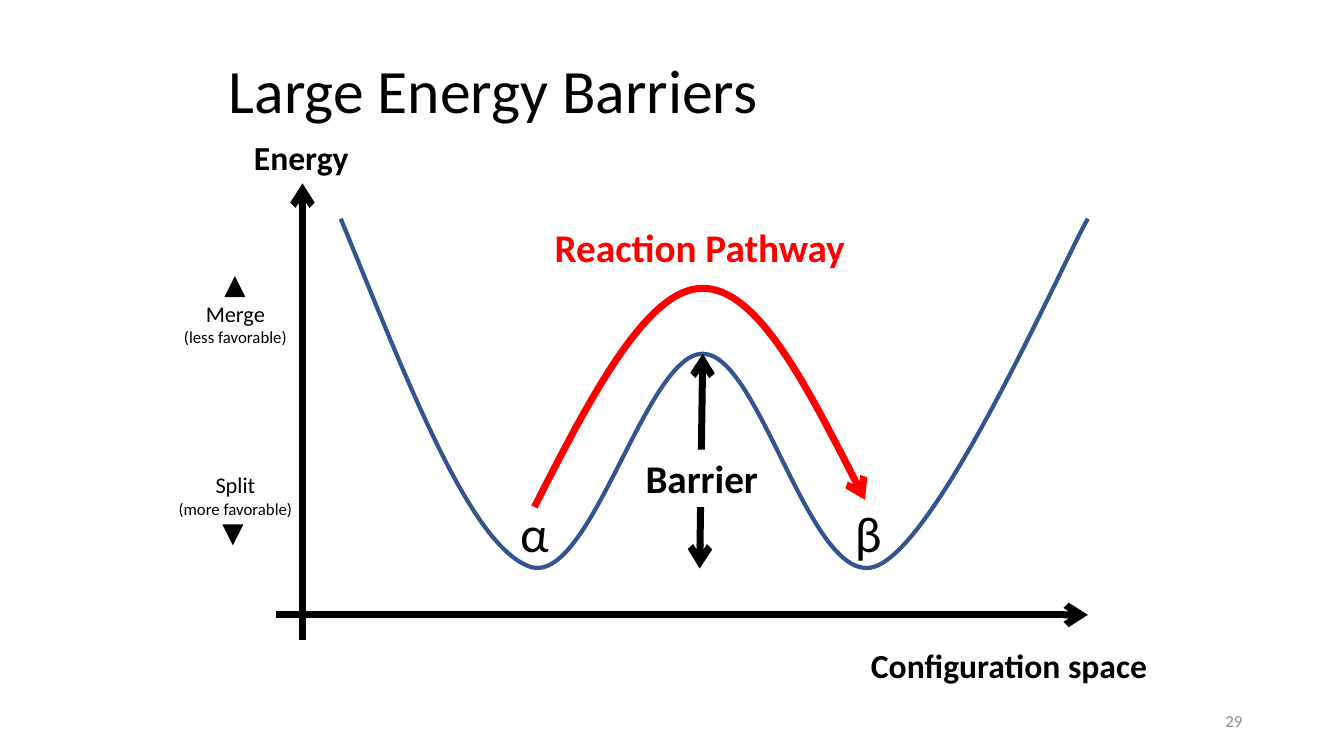
from lxml.etree import SubElement
from pptx import Presentation
from pptx.dml.color import RGBColor
from pptx.enum.shapes import MSO_CONNECTOR, MSO_SHAPE
from pptx.enum.text import MSO_ANCHOR, PP_ALIGN
from pptx.oxml.ns import qn
from pptx.util import Inches, Pt

BLACK, RED, BLUE, GREY, WHITE = "000000", "FF0000", "325491", "8C8C8C", "FFFFFF"


def colour(value):
    return RGBColor.from_string(value)


def style_line(shape, value, width, head=None, tail=None):
    """Colour a line and put arrowheads at its start (head) and end (tail)."""
    shape.line.color.rgb = colour(value)
    shape.line.width = Pt(width)
    for tag, kind in (("a:headEnd", head), ("a:tailEnd", tail)):
        if kind:
            SubElement(shape.line._get_or_add_ln(), qn(tag)).set("type", kind)


def write(shape, lines, value=BLACK, bold=False, align=PP_ALIGN.LEFT,
          anchor=MSO_ANCHOR.TOP, wrap=True):
    """Fill a shape with (text, size) lines, one paragraph each."""
    frame = shape.text_frame
    frame.word_wrap = wrap
    frame.vertical_anchor = anchor
    frame.text = "\n".join(text for text, size in lines)
    for para, (text, size) in zip(frame.paragraphs, lines):
        para.alignment = align
        for span in para.runs:
            span.font.name = "Calibri"
            span.font.size = Pt(size)
            span.font.bold = bold
            span.font.color.rgb = colour(value)


def add_text(page, place, lines, **options):
    box = page.shapes.add_textbox(*map(Inches, place))
    write(box, lines, **options)
    return box


def add_arrow(page, start, end, head=None, tail=None):
    points = map(Inches, (*start, *end))
    arrow = page.shapes.add_connector(MSO_CONNECTOR.STRAIGHT, *points)
    style_line(arrow, BLACK, 5, head, tail)
    SubElement(arrow._element.spPr, qn("a:effectLst"))


def add_curve(page, points, value, width, tail=None):
    """Draw Bézier pieces: a start, then two controls and an end for each."""
    start, *others = [(Inches(x), Inches(y)) for x, y in points]
    builder = page.shapes.build_freeform(*start)
    builder.add_line_segments(others, close=False)
    curve = builder.convert_to_shape()
    curve.fill.background()
    curve.shadow.inherit = False
    style_line(curve, value, width, tail=tail)
    # Turn every three straight segments into one cubic piece
    outline = next(curve._element.iter(qn("a:path")))
    segments = outline.findall(qn("a:lnTo"))
    for first in range(0, len(segments), 3):
        piece = SubElement(outline, qn("a:cubicBezTo"))
        for segment in segments[first:first + 3]:
            piece.append(segment[0])
            outline.remove(segment)


def add_tendency(page, top, name, note, x, tail_start, tail_end):
    """A label beside the energy axis with a small triangle."""
    add_arrow(page, (x, tail_start), (x, tail_end), tail="triangle")
    add_text(page, (1.67, top, 1.33, 0.57), [(name, 16), (note, 12)],
             align=PP_ALIGN.CENTER)


def main():
    deck = Presentation()
    deck.slide_width, deck.slide_height = Inches(13.33), Inches(7.5)
    page = deck.slides.add_slide(deck.slide_layouts[6])

    # Energy landscape with two wells
    add_curve(page, [(3.38, 2.17),
                     (4.02, 3.73), (4.65, 5.4), (5.25, 5.62),
                     (5.85, 5.84), (6.4, 3.51), (6.97, 3.51),
                     (7.54, 3.51), (8.04, 5.84), (8.68, 5.62),
                     (9.32, 5.4), (10.56, 2.56), (10.79, 2.17)], BLUE, 3)

    # Axes and their names
    add_arrow(page, (3, 1.82), (3, 6.35), head="arrow")
    add_arrow(page, (10.79, 6.1), (2.74, 6.1), head="arrow")
    add_text(page, (8.54, 6.35, 2.97, 0.5), [("Configuration space", 24)],
             bold=True, wrap=False)
    add_text(page, (2.42, 1.31, 1.15, 0.5), [("Energy", 24)],
             bold=True, wrap=False)

    # States at the bottom of the wells
    for left, state in ((5.06, "α"), (8.38, "β")):
        add_text(page, (left, 4.93, 0.48, 0.71), [(state, 36)])

    # Title
    title = add_text(page, (2.17, 0.3, 9, 1.25), [("Large Energy Barriers", 44)],
                     anchor=MSO_ANCHOR.MIDDLE)
    title.text_frame.paragraphs[0].line_spacing = 0.9

    # Reaction pathway
    add_curve(page, [(5.3, 5.03),
                     (5.85, 3.95), (6.41, 2.87), (6.96, 2.86),
                     (7.5, 2.85), (8.04, 3.9), (8.58, 4.96)],
              RED, 5, tail="arrow")
    add_text(page, (5.38, 2.17, 3.12, 0.57), [("Reaction Pathway", 28)],
             value=RED, bold=True, align=PP_ALIGN.CENTER, wrap=False)

    # Barrier height, its label covering the middle of the arrow
    add_arrow(page, (6.97, 3.51), (6.94, 5.64), head="arrow", tail="arrow")
    barrier = page.shapes.add_shape(
        MSO_SHAPE.RECTANGLE, *map(Inches, (6.27, 4.46, 1.38, 0.57)))
    barrier.shadow.inherit = False
    barrier.fill.solid()
    barrier.fill.fore_color.rgb = colour(WHITE)
    barrier.line.fill.background()
    write(barrier, [("Barrier", 28)], bold=True, align=PP_ALIGN.CENTER)

    # What happens up and down the energy axis
    add_tendency(page, 2.93, "Merge", "(less favorable)", 2.33, 2.93, 2.74)
    add_tendency(page, 4.63, "Split", "(more favorable)", 2.31, 5.23, 5.41)

    # Page number
    add_text(page, (9.42, 6.95, 3, 0.4), [("29", 12)], value=GREY,
             align=PP_ALIGN.RIGHT, anchor=MSO_ANCHOR.MIDDLE)

    deck.save("out.pptx")


if __name__ == "__main__":
    main()
